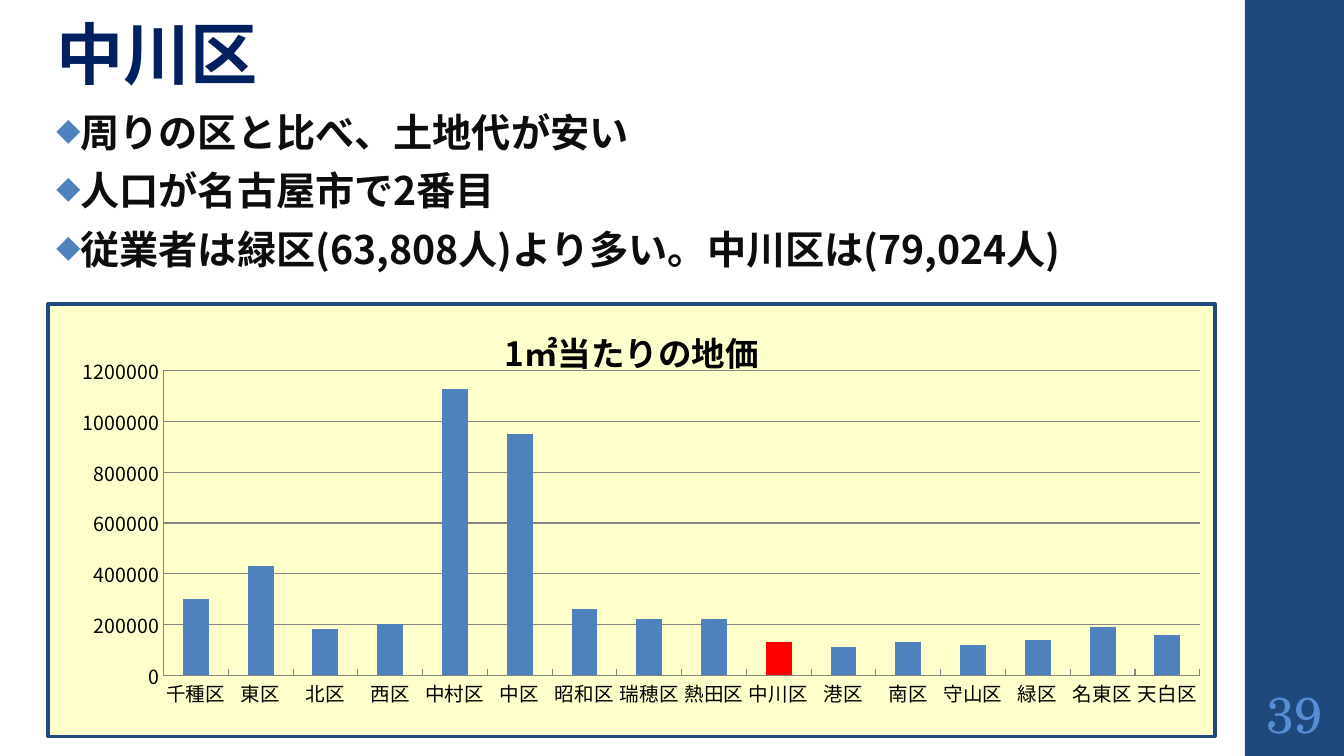
"""Build the Nakagawa ward slide with its land price chart."""
from lxml.etree import SubElement
from pptx import Presentation
from pptx.chart.data import CategoryChartData as Data
from pptx.dml.color import RGBColor
from pptx.enum.chart import XL_CHART_TYPE as Kind, XL_TICK_MARK as Tick
from pptx.enum.shapes import MSO_SHAPE as Shape
from pptx.enum.text import MSO_ANCHOR as Anchor, MSO_AUTO_SIZE as Auto, PP_ALIGN as Align
from pptx.oxml import parse_xml
from pptx.oxml.ns import nsdecls, qn
from pptx.util import Cm, Pt

NAVY = RGBColor(0x00, 0x20, 0x60)
BAND = RGBColor(0x1F, 0x49, 0x7D)
BLUE = RGBColor(0x4F, 0x81, 0xBD)
PALE = RGBColor(0x55, 0x8E, 0xD5)
INK = RGBColor(0x0D, 0x0D, 0x0D)
BLACK = RGBColor(0, 0, 0)
GRAY = RGBColor(0x86, 0x86, 0x86)
RED = RGBColor(0xFF, 0, 0)
CREAM = RGBColor(0xFF, 0xFF, 0xCC)
SANS = "Noto Sans CJK JP"
SERIF = "TeX Gyre Schola"

POINTS = [
    "周りの区と比べ、土地代が安い",
    "人口が名古屋市で2番目",
    "従業者は緑区(63,808人)より多い。中川区は(79,024人)",
]
PRICES = {
    "千種区": 300000, "東区": 430000, "北区": 180000, "西区": 200000,
    "中村区": 1130000, "中区": 950000, "昭和区": 260000, "瑞穂区": 220000,
    "熱田区": 220000, "中川区": 130000, "港区": 110000, "南区": 130000,
    "守山区": 120000, "緑区": 140000, "名東区": 190000, "天白区": 160000,
}


def style(font, color, **form):
    for key, val in form.items():
        setattr(font, key, val)
    font.color.rgb = color


def place(shape, *box):
    for key, val in zip(("left", "top", "width", "height"), box):
        setattr(shape, key, Cm(val))
    frame = shape.text_frame
    form = dict(word_wrap=True, auto_size=Auto.NONE, margin_left=Cm(0.25),
                margin_right=Cm(0.13), margin_top=0, margin_bottom=0)
    for key, val in form.items():
        setattr(frame, key, val)
    return frame


deck = Presentation()
deck.slide_width, deck.slide_height = Cm(33.87), Cm(19.05)
slide = deck.slides.add_slide(deck.slide_layouts[5])
shapes = slide.shapes

band = shapes.add_shape(Shape.RECTANGLE, Cm(31.37), 0, Cm(2.5), Cm(19.05))
band.shadow.inherit = False
band.fill.solid()
band.fill.fore_color.rgb = BAND
band.line.fill.background()

frame = place(shapes.title, 1.17, 0.33, 30.2, 2.2)
frame.text = "中川区"
frame.vertical_anchor = Anchor.MIDDLE
para = frame.paragraphs[0]
para.alignment = Align.LEFT
para.line_spacing = 0.95
style(para.runs[0].font, NAVY, name=SANS, size=Pt(48), bold=True)

frame = place(shapes.add_textbox(0, 0, 0, 0), 1.17, 2.82, 30.2, 4.8)
frame.text = "\n".join(POINTS)
for para in frame.paragraphs:
    para.line_spacing = 0.95
    para.space_after = Pt(9.7)
    style(para.runs[0].font, INK, name=SANS, size=Pt(28), bold=True)
    props = para._p.get_or_add_pPr()
    props.set("marL", str(Cm(0.5)))
    props.set("indent", str(Cm(-0.5)))
    tint = SubElement(props, qn("a:buClr"))
    SubElement(tint, qn("a:srgbClr"), val=str(BLUE))
    SubElement(props, qn("a:buSzPct"), val="80000")
    SubElement(props, qn("a:buChar"), char="◆")

frame = place(shapes.add_textbox(0, 0, 0, 0), 31.37, 17.15, 2.5, 1.65)
frame.text = "39"
frame.margin_left = frame.margin_right
frame.vertical_anchor = Anchor.MIDDLE
para = frame.paragraphs[0]
para.alignment = Align.CENTER
style(para.runs[0].font, PALE, name=SERIF, size=Pt(36))

data = Data()
data.categories = list(PRICES)
data.add_series("地価", PRICES.values())
chart = shapes.add_chart(Kind.COLUMN_CLUSTERED, Cm(1.17), Cm(7.62),
                         Cm(29.49), Cm(10.97), data).chart
chart.has_legend = False
style(chart.font, BLACK, name=SERIF, size=Pt(10))
chart.has_title = True
head = chart.chart_title.text_frame
head.text = "1㎡当たりの地価"
style(head.paragraphs[0].runs[0].font, BLACK, name=SANS, size=Pt(24), bold=True)

for axis in (chart.category_axis, chart.value_axis):
    axis.major_tick_mark = Tick.INSIDE
    axis.minor_tick_mark = Tick.NONE
    axis.format.line.color.rgb = GRAY
    style(axis.tick_labels.font, BLACK, name=SANS, size=Pt(14))
scale = chart.value_axis
scale.minimum_scale, scale.maximum_scale, scale.major_unit = 0, 1200000, 200000
scale.has_major_gridlines = True
scale.major_gridlines.format.line.color.rgb = GRAY

plot = chart.plots[0]
plot.gap_width = 150
plot.vary_by_categories = False
bars = plot.series[0]
ward = bars.points[list(PRICES).index("中川区")]
for item, color in ((bars, BLUE), (ward, RED)):
    item.format.fill.solid()
    item.format.fill.fore_color.rgb = color

root = chart._chartSpace
area = root.find(qn("c:chart"))
area.addnext(parse_xml(
    f'<c:spPr {nsdecls("c", "a")}>'
    f'<a:solidFill><a:srgbClr val="{CREAM}"/></a:solidFill>'
    f'<a:ln w="{Pt(2.25)}"><a:solidFill><a:srgbClr val="{BAND}"/></a:solidFill></a:ln>'
    '</c:spPr>'))
inner = area.find(qn("c:plotArea"))
for old in inner.findall(qn("c:layout")):
    inner.remove(old)
layout = parse_xml(f'<c:layout {nsdecls("c")}/>')
inner.insert(0, layout)
manual = SubElement(layout, qn("c:manualLayout"))
for tag, val in dict(layoutTarget="inner", xMode="edge", yMode="edge",
                     x="0.099", y="0.155", w="0.888", h="0.704").items():
    SubElement(manual, qn(f"c:{tag}"), val=val)

for tree in (slide.element, root):
    for latin in list(tree.iter(qn("a:latin"))):
        latin.addnext(parse_xml(
            f'<a:ea {nsdecls("a")} typeface="{latin.get("typeface")}"/>'))

deck.save("out.pptx")
